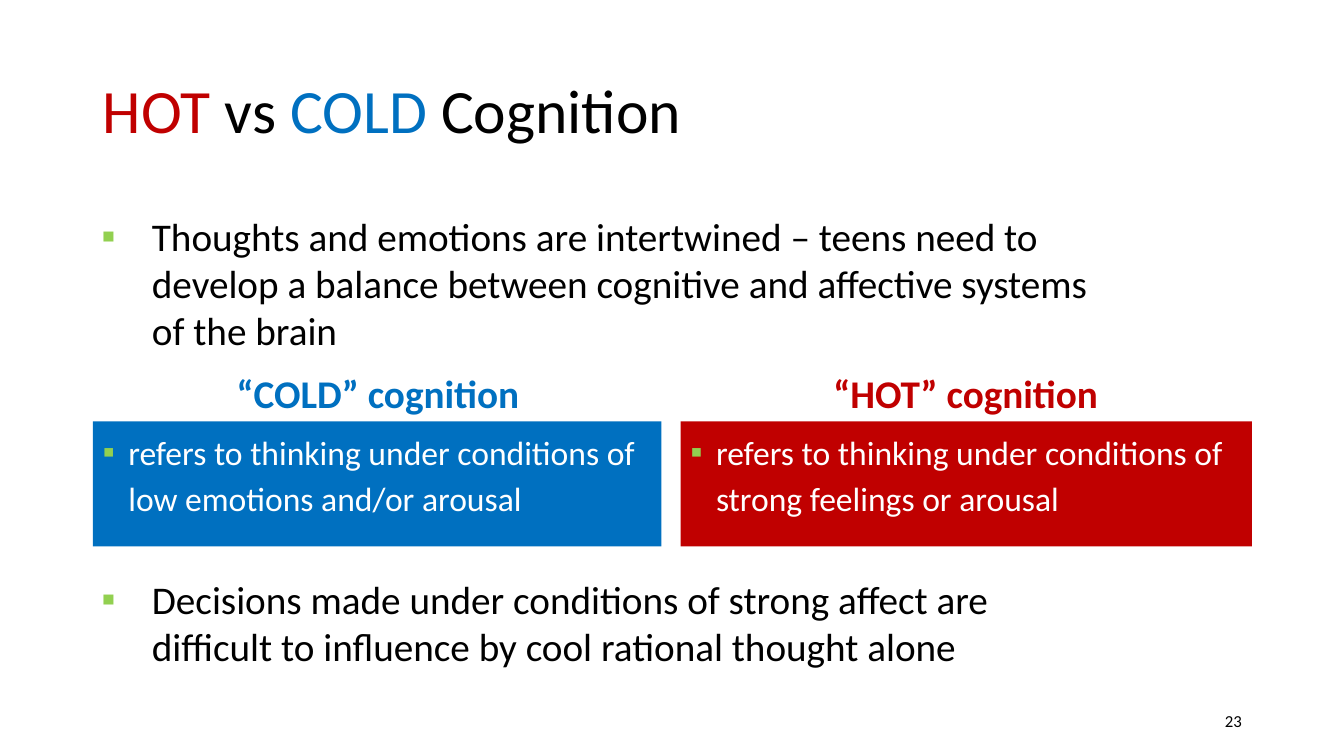
from lxml import etree
from pptx import Presentation
from pptx.dml.color import RGBColor
from pptx.enum.text import MSO_ANCHOR, MSO_AUTO_SIZE, PP_ALIGN
from pptx.oxml.ns import qn
from pptx.util import Cm, Pt

LEFT, CENTER, RIGHT = PP_ALIGN.LEFT, PP_ALIGN.CENTER, PP_ALIGN.RIGHT
TOP, MIDDLE, BOTTOM = MSO_ANCHOR.TOP, MSO_ANCHOR.MIDDLE, MSO_ANCHOR.BOTTOM
NO_AUTOFIT = MSO_AUTO_SIZE.NONE
HOT = RGBColor(0xC0, 0x00, 0x00)
COLD = RGBColor(0x00, 0x70, 0xC0)
BLACK = RGBColor(0x00, 0x00, 0x00)
WHITE = RGBColor(0xFF, 0xFF, 0xFF)
BULLET_GREEN = RGBColor(0x92, 0xD0, 0x50)
FONT = "Calibri"


def write(holder, box, runs, size, align=LEFT, anchor=TOP, spacing=1.0, bold=False):
    holder.left, holder.top, holder.width, holder.height = [Cm(n) for n in box]
    frame = holder.text_frame
    frame.word_wrap = True
    frame.auto_size = NO_AUTOFIT
    frame.vertical_anchor = anchor
    paragraph = frame.paragraphs[0]
    paragraph.alignment = align
    paragraph.line_spacing = spacing
    paragraph.space_before = Pt(0)
    for text, color in runs:
        run = paragraph.add_run()
        run.text = text
        run.font.name = FONT
        run.font.size = Pt(size)
        run.font.bold = bold
        run.font.color.rgb = color
    return paragraph


def add_bullet(paragraph, indent):
    properties = paragraph._p.get_or_add_pPr()
    properties.set("marL", str(Cm(indent)))
    properties.set("indent", str(-Cm(indent)))
    color = etree.SubElement(properties, qn("a:buClr"))
    etree.SubElement(color, qn("a:srgbClr"), val=str(BULLET_GREEN))
    etree.SubElement(properties, qn("a:buFont"), typeface=FONT)
    etree.SubElement(properties, qn("a:buChar"), char="▪")


presentation = Presentation()
presentation.slide_width = Cm(33.87)
presentation.slide_height = Cm(19.05)
comparison_layout = presentation.slide_layouts[4]
slide = presentation.slides.add_slide(comparison_layout)

title_runs = [("HOT ", HOT), ("vs ", BLACK), ("COLD ", COLD), ("Cognition", BLACK)]
write(slide.shapes.title, (2.34, 1.02, 29.21, 3.68), title_runs, 44,
      anchor=MIDDLE, spacing=0.9)

cognitions = [
    (1, 2.39, 2.34, 14.33, COLD, "“COLD” cognition",
     "refers to thinking under conditions of low emotions and/or arousal"),
    (3, 17.2, 17.15, 14.4, HOT, "“HOT” cognition",
     "refers to thinking under conditions of strong feelings or arousal"),
]
for index, heading_left, panel_left, panel_width, color, heading, meaning in cognitions:
    write(slide.placeholders[index], (heading_left, 8.99, 14.27, 1.63),
          [(heading, color)], 28, CENTER, BOTTOM, 1.14, True)
    panel = slide.placeholders[index + 1]
    panel.fill.solid()
    panel.fill.fore_color.rgb = color
    definition = write(panel, (panel_left, 10.62, panel_width, 3.15),
                       [(meaning, WHITE)], 24, spacing=1.14)
    add_bullet(definition, 0.64)

statements = [
    (5.23, 3.84, "Thoughts and emotions are intertwined – teens need to develop "
                 "a balance between cognitive and affective systems of the brain"),
    (14.38, 2.64, "Decisions made under conditions of strong affect are difficult "
                  "to influence by cool rational thought alone"),
]
for top, height, text in statements:
    box = (2.31, top, 25.35, height)
    statement = slide.shapes.add_textbox(0, 0, 0, 0)
    add_bullet(write(statement, box, [(text, BLACK)], 28), 1.27)

page_number = slide.shapes.add_textbox(0, 0, 0, 0)
write(page_number, (23.93, 17.65, 7.62, 1.02), [("23", BLACK)], 12, RIGHT, MIDDLE)

presentation.save("out.pptx")
